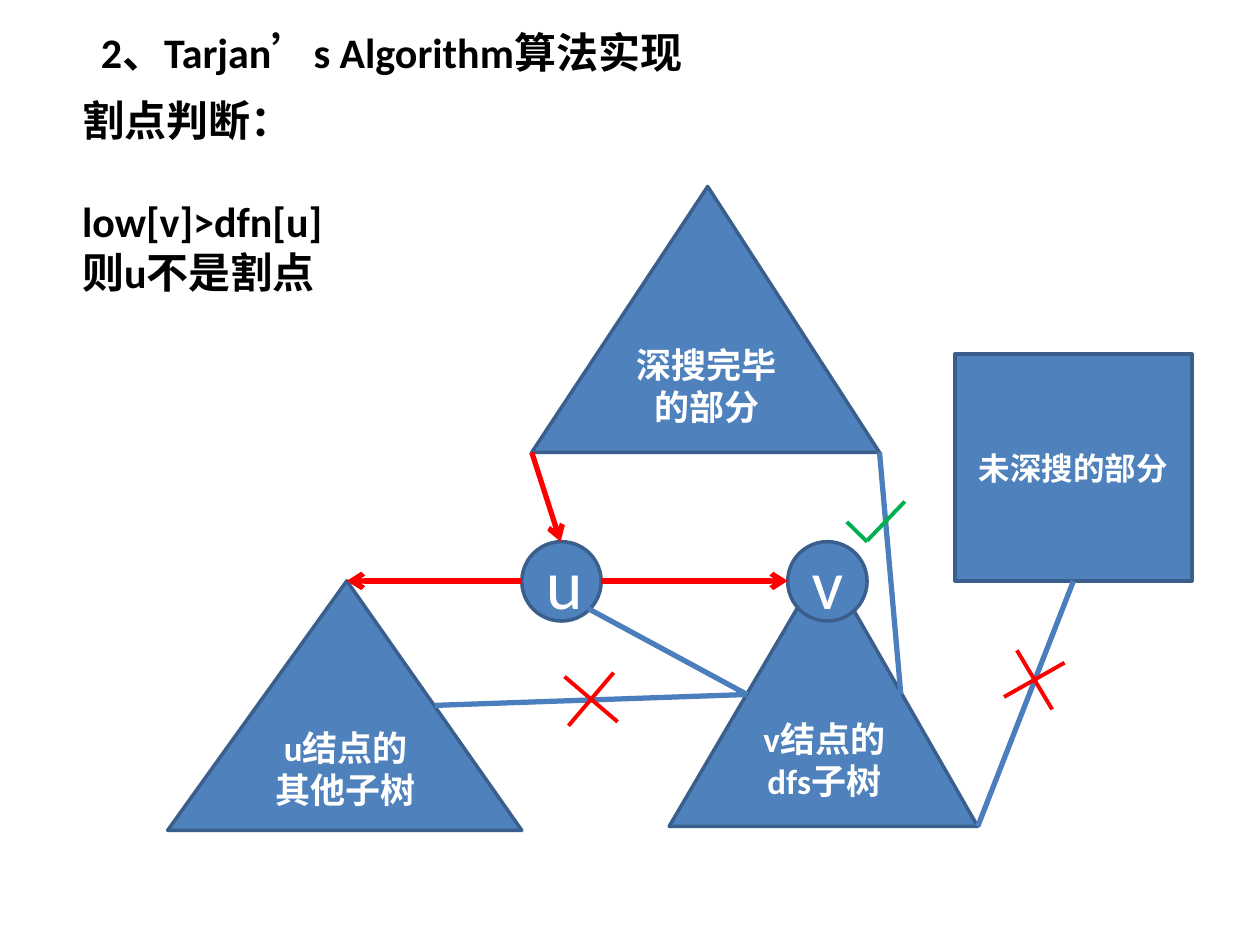
import pptx
import pptx.dml.color
import pptx.enum.shapes
import pptx.enum.text
import pptx.oxml.ns
import pptx.util
from lxml import etree
from pptx.util import Cm

COLORS = {
    "fill": "4F81BD",
    "outline": "3A5F8C",
    "edge": "4B7EBC",
    "red": "FF0000",
    "green": "00B050",
    "white": "FFFFFF",
    "black": "000000",
}
SHAPES = pptx.enum.shapes.MSO_SHAPE
APEX = 0.506
NODE_SIZE = 1.6


def rgb(name):
    return pptx.dml.color.RGBColor.from_string(COLORS[name])


def add_element(parent, tag, **attributes):
    return etree.SubElement(parent, pptx.oxml.ns.qn(tag), **attributes)


def format_text(frame, size, color, alignment, bold=True):
    for para in frame.paragraphs:
        para.alignment = alignment
        for span in para.runs:
            span.font.name = "Calibri"
            span.font.size = pptx.util.Pt(size)
            span.font.bold = bold
            span.font.color.rgb = rgb(color)


def fill_placeholder(box, bounds, text):
    box.left, box.top, box.width, box.height = map(Cm, bounds)
    frame = box.text_frame
    frame.text = text
    frame.word_wrap = True
    frame.auto_size = pptx.enum.text.MSO_AUTO_SIZE.NONE
    frame.vertical_anchor = pptx.enum.text.MSO_ANCHOR.TOP
    format_text(frame, 24, "black", pptx.enum.text.PP_ALIGN.LEFT)


def remove_bullets(frame):
    for para in frame.paragraphs:
        para.space_before = pptx.util.Pt(0)
        properties = para._p.get_or_add_pPr()
        properties.set("marL", "0")
        properties.set("indent", "0")
        add_element(properties, "a:buNone")


def add_block(page, kind, bounds, text, size=20, bold=True):
    block = page.shapes.add_shape(kind, *map(Cm, bounds))
    block.shadow.inherit = False
    if kind == SHAPES.ISOSCELES_TRIANGLE:
        block.adjustments[0] = APEX
    block.fill.solid()
    block.fill.fore_color.rgb = rgb("fill")
    block.line.color.rgb = rgb("outline")
    block.line.width = pptx.util.Pt(2)
    frame = block.text_frame
    frame.text = text
    frame.word_wrap = True
    frame.vertical_anchor = pptx.enum.text.MSO_ANCHOR.MIDDLE
    format_text(frame, size, "white", pptx.enum.text.PP_ALIGN.CENTER, bold)


def add_node(page, left, top, text):
    add_block(page, SHAPES.OVAL, (left, top, NODE_SIZE, NODE_SIZE), text, 40, False)


def add_line(shapes, start, end, color, width=3, arrow=False):
    line = shapes.add_connector(
        pptx.enum.shapes.MSO_CONNECTOR.STRAIGHT, *map(Cm, start + end)
    )
    line.line.color.rgb = rgb(color)
    line.line.width = pptx.util.Pt(width)
    if arrow:
        add_element(line.line._get_or_add_ln(), "a:tailEnd", type="arrow")
    add_element(line._element.spPr, "a:effectLst")


def add_mark(page, strokes, color):
    group = page.shapes.add_group_shape()
    for start, end in strokes:
        add_line(group.shapes, start, end, color, 2.25)


def main():
    deck = pptx.Presentation()
    deck.slide_width, deck.slide_height = Cm(25.4), Cm(19.05)
    page = deck.slides.add_slide(deck.slide_layouts[1])

    fill_placeholder(
        page.shapes.title, (1.78, 0.41, 18.06, 1.27), "2、Tarjan’s Algorithm算法实现"
    )
    body = page.placeholders[1]
    fill_placeholder(
        body, (1.4, 1.78, 7.54, 4.37), "割点判断：\nlow[v]>dfn[u]\n则u不是割点"
    )
    remove_bullets(body.text_frame)
    body.text_frame.paragraphs[1].space_before = pptx.util.Pt(29)

    triangle = SHAPES.ISOSCELES_TRIANGLE
    add_block(page, triangle, (10.72, 3.76, 7.01, 5.36), "深搜完毕的部分")
    add_block(page, triangle, (13.49, 11.3, 6.22, 5.36), "v结点的dfs子树")
    add_block(page, triangle, (3.38, 11.71, 7.14, 5.03), "u结点的其他子树")
    add_block(page, SHAPES.RECTANGLE, (19.25, 7.14, 4.78, 4.57), "未深搜的部分", 18)
    add_node(page, 10.52, 10.92, "u")
    add_node(page, 15.88, 10.92, "v")

    tree_arrows = [
        ((12.12, 11.71), (15.88, 11.71)),
        ((10.72, 9.12), (11.3, 10.92)),
        ((10.52, 11.71), (6.99, 11.71)),
    ]
    for start, end in tree_arrows:
        add_line(page.shapes, start, end, "red", arrow=True)

    subtree_side = (15.06, 14.0)
    other_edges = [
        ((11.86, 12.27), subtree_side),
        (subtree_side, (8.76, 14.22)),
        ((19.71, 16.66), (21.64, 11.71)),
        ((18.16, 14.0), (17.73, 9.12)),
    ]
    for start, end in other_edges:
        add_line(page.shapes, start, end, "edge")

    unvisited_cross = [((20.5, 13.11), (21.21, 14.3)), ((20.24, 14.05), (21.46, 13.36))]
    sibling_cross = [((11.38, 13.64), (12.45, 14.55)), ((11.46, 14.63), (12.37, 13.56))]
    ancestor_check = [((17.07, 10.52), (17.48, 10.92)), ((17.48, 10.9), (18.24, 10.11))]
    add_mark(page, unvisited_cross, "red")
    add_mark(page, sibling_cross, "red")
    add_mark(page, ancestor_check, "green")

    deck.save("out.pptx")


if __name__ == "__main__":
    main()
